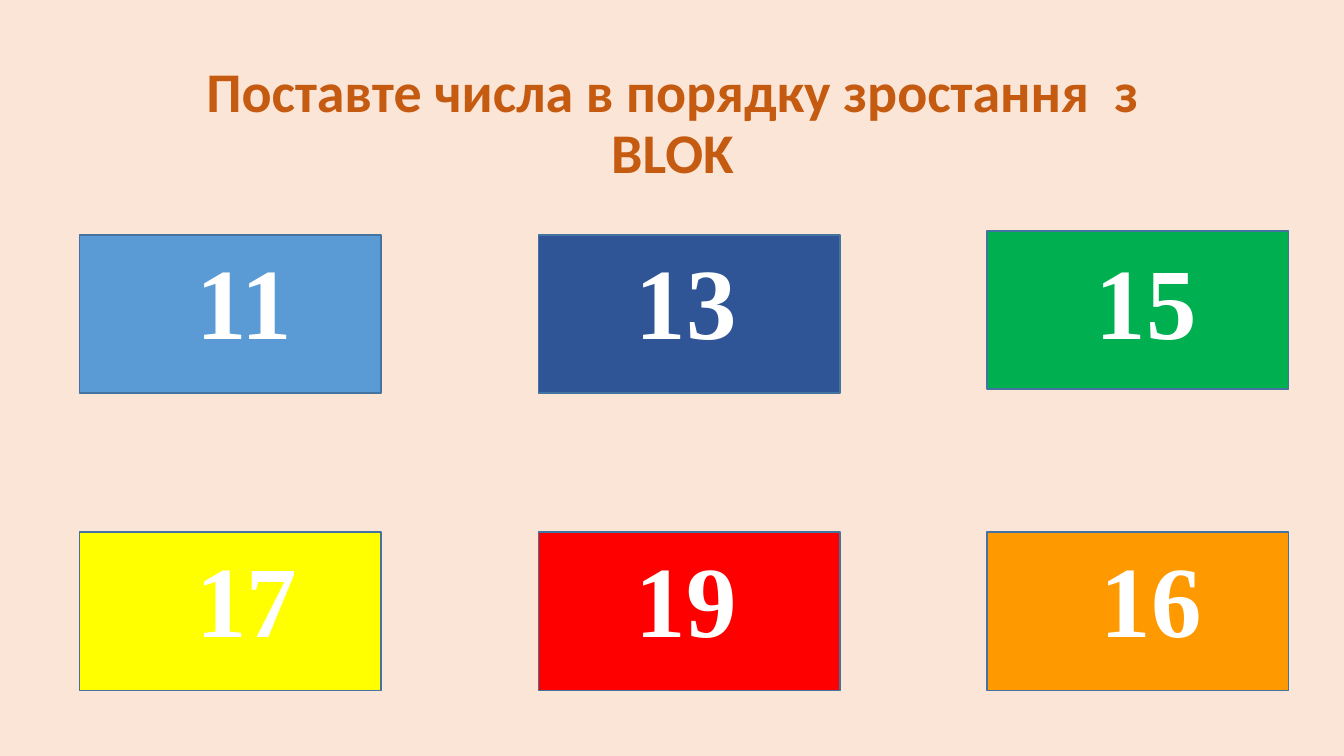
from pptx import Presentation
from pptx.dml.color import RGBColor
from pptx.enum.shapes import MSO_SHAPE
from pptx.enum.text import MSO_ANCHOR, PP_ALIGN
from pptx.util import Inches, Pt


def color(value):
    return RGBColor.from_string(value)


class NumberSlide:
    background = "FBE5D6"
    title_color = "C55A11"
    outline = "43739E"
    number_color = "FFFFFF"
    title_font = "Calibri"
    number_font = "Times New Roman"

    def __init__(self, deck):
        self.slide = deck.slides.add_slide(deck.slide_layouts[6])
        fill = self.slide.background.fill
        fill.solid()
        fill.fore_color.rgb = color(self.background)

    def text(self, content, left, top, width, height, size, font_name, font_color):
        box = self.slide.shapes.add_textbox(
            Inches(left), Inches(top), Inches(width), Inches(height)
        )
        frame = box.text_frame
        frame.word_wrap = True
        frame.text = content
        font = frame.paragraphs[0].runs[0].font
        font.name = font_name
        font.size = Pt(size)
        font.bold = True
        font.color.rgb = color(font_color)
        return frame

    def title(self, content):
        frame = self.text(
            content, 1.67, 0.23, 10, 1.66, 40, self.title_font, self.title_color
        )
        frame.vertical_anchor = MSO_ANCHOR.BOTTOM
        frame.paragraphs[0].alignment = PP_ALIGN.CENTER
        frame.paragraphs[0].line_spacing = 0.9

    def brick(self, left, top, fill_color):
        shape = self.slide.shapes.add_shape(
            MSO_SHAPE.RECTANGLE, Inches(left), Inches(top), Inches(2.99), Inches(1.57)
        )
        shape.shadow.inherit = False
        shape.fill.solid()
        shape.fill.fore_color.rgb = color(fill_color)
        shape.line.color.rgb = color(self.outline)
        shape.line.width = Pt(1)

    def number(self, content, left, top):
        self.text(
            content, left, top, 1.4, 1.31, 72, self.number_font, self.number_color
        )


def main():
    deck = Presentation()
    deck.slide_width = Inches(13.33)
    deck.slide_height = Inches(7.5)
    page = NumberSlide(deck)
    page.title("Поставте числа в порядку зростання  з BLOK")

    brick_lefts = (0.79, 5.34, 9.79)
    rows = (
        (
            2.32,
            (
                ("11", "5B9BD5", 1.85, 2.33),
                ("13", "2F5597", 6.21, 2.33),
                ("15", "00B050", 10.77, 2.29),
            ),
        ),
        (
            5.28,
            (
                ("17", "FFFF00", 1.85, 5.28),
                ("19", "FF0000", 6.21, 5.28),
                ("16", "FF9900", 10.82, 5.28),
            ),
        ),
    )
    for number_top, bricks in rows:
        for brick_left, brick in zip(brick_lefts, bricks):
            number, fill_color, number_left, brick_top = brick
            page.brick(brick_left, brick_top, fill_color)
            page.number(number, number_left, number_top)

    deck.save("out.pptx")


if __name__ == "__main__":
    main()
